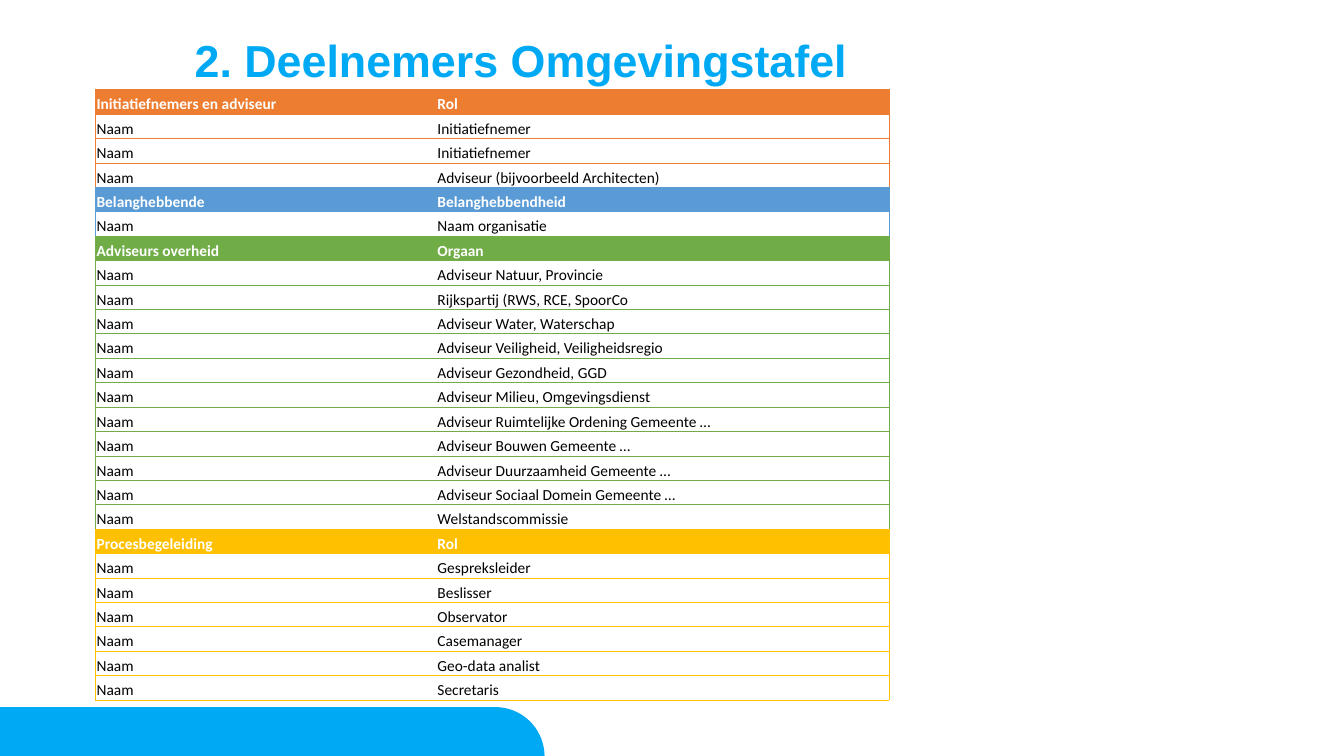
"""Build the slide that lists who sits at the Omgevingstafel."""
import math
from lxml import etree
from pptx import Presentation, util as u
from pptx.dml.color import RGBColor
from pptx.enum import text
from pptx.oxml import ns

TITLE = "2. Deelnemers Omgevingstafel"
BLUE = "00A9F3"
GROUPS = [
    ("ED7D31", "Initiatiefnemers en adviseur", "Rol", [
        "Initiatiefnemer", "Initiatiefnemer",
        "Adviseur (bijvoorbeeld Architecten)"]),
    ("5B9BD5", "Belanghebbende", "Belanghebbendheid", ["Naam organisatie"]),
    ("70AD47", "Adviseurs overheid", "Orgaan", [
        "Adviseur Natuur, Provincie", "Rijkspartij (RWS, RCE, SpoorCo",
        "Adviseur Water, Waterschap", "Adviseur Veiligheid, Veiligheidsregio",
        "Adviseur Gezondheid, GGD", "Adviseur Milieu, Omgevingsdienst",
        "Adviseur Ruimtelijke Ordening Gemeente …",
        "Adviseur Bouwen Gemeente …", "Adviseur Duurzaamheid Gemeente …",
        "Adviseur Sociaal Domein Gemeente …", "Welstandscommissie"]),
    ("FFC000", "Procesbegeleiding", "Rol", [
        "Gespreksleider", "Beslisser", "Observator", "Casemanager",
        "Geo-data analist", "Secretaris"]),
]
WIDTH, HEIGHT = 960, 540
COLS = (243.5, 323)
LEFT, TOP, ROW = 68.4, 64.1, 17.45
TABS = (-0.5, 177.3)
TAB_W, TAB_H = 211.7, 35.2
NO_STYLE = "{2D5ABB26-0587-4C30-8999-92F81FD0307C}"


def color(code):
    return RGBColor.from_string(code)


def write(frame, words, font="Calibri", size=11, ink="000000", bold=False, space=1.0):
    para = frame.paragraphs[0]
    para.line_spacing = space
    run = para.add_run()
    run.text = words
    run.font.name, run.font.size, run.font.bold = font, u.Pt(size), bold
    run.font.color.rgb = color(ink)


def border(cell, sides):
    props = cell._tc.get_or_add_tcPr()
    for side, code in sides:
        line = etree.SubElement(props, ns.qn("a:ln" + side), w=str(u.Pt(0.5)))
        fill = etree.SubElement(line, ns.qn("a:solidFill"))
        etree.SubElement(fill, ns.qn("a:srgbClr"), val=code)


def draw_tab(slide, left):
    right, base = left + TAB_W, HEIGHT + 0.3
    arc = [math.radians(deg) for deg in range(90, -1, -3)]
    curve = [(right - TAB_H + TAB_H * math.cos(a), base - TAB_H * math.sin(a))
             for a in arc]
    dots = [(u.Pt(x), u.Pt(y)) for x, y in [(left, base - TAB_H)] + curve]
    path = slide.shapes.build_freeform(u.Pt(left), u.Pt(base))
    path.add_line_segments(dots, close=True)
    tab = path.convert_to_shape()
    tab.shadow.inherit = False
    tab.fill.solid()
    tab.fill.fore_color.rgb = color(BLUE)
    tab.line.fill.background()


def draw_title(slide):
    box = slide.shapes.add_textbox(u.Pt(139), u.Pt(27.4), u.Pt(790), u.Pt(57))
    frame = box.text_frame
    frame.word_wrap = True
    frame.margin_left = frame.margin_right = 0
    frame.margin_top = frame.margin_bottom = 0
    write(frame, TITLE, font="Arial", size=32, ink=BLUE, bold=True, space=0.9)


def draw_table(slide):
    rows = []
    for code, head, role, names in GROUPS:
        rows.append((code, True, (head, role)))
        rows += [(code, False, ("Naam", name)) for name in names]
    frame = slide.shapes.add_table(
        len(rows), len(COLS), u.Pt(LEFT), u.Pt(TOP),
        u.Pt(sum(COLS)), u.Pt(ROW * len(rows)))
    table = frame.table
    table.first_row = table.horz_banding = False
    table._tbl.tblPr.find(ns.qn("a:tableStyleId")).text = NO_STYLE
    for col, width in zip(table.columns, COLS):
        col.width = u.Pt(width)
    below = [row[0] for row in rows[1:]] + [rows[-1][0]]
    for r, (code, head, words) in enumerate(rows):
        table.rows[r].height = u.Pt(ROW)
        for c, side in enumerate("LR"):
            cell = table.cell(r, c)
            cell.margin_left = cell.margin_right = cell.margin_top = u.Pt(0.6)
            cell.margin_bottom = 0
            cell.vertical_anchor = text.MSO_ANCHOR.BOTTOM
            border(cell, [(side, code), ("T", code), ("B", below[r])])
            if head:
                cell.fill.solid()
                cell.fill.fore_color.rgb = color(code)
            else:
                cell.fill.background()
            write(cell.text_frame, words[c], bold=head,
                  ink="FFFFFF" if head else "000000")


def main():
    deck = Presentation()
    deck.slide_width, deck.slide_height = u.Pt(WIDTH), u.Pt(HEIGHT)
    slide = deck.slides.add_slide(deck.slide_layouts[6])
    for left in TABS:
        draw_tab(slide, left)
    draw_title(slide)
    draw_table(slide)
    deck.save("out.pptx")


if __name__ == "__main__":
    main()
